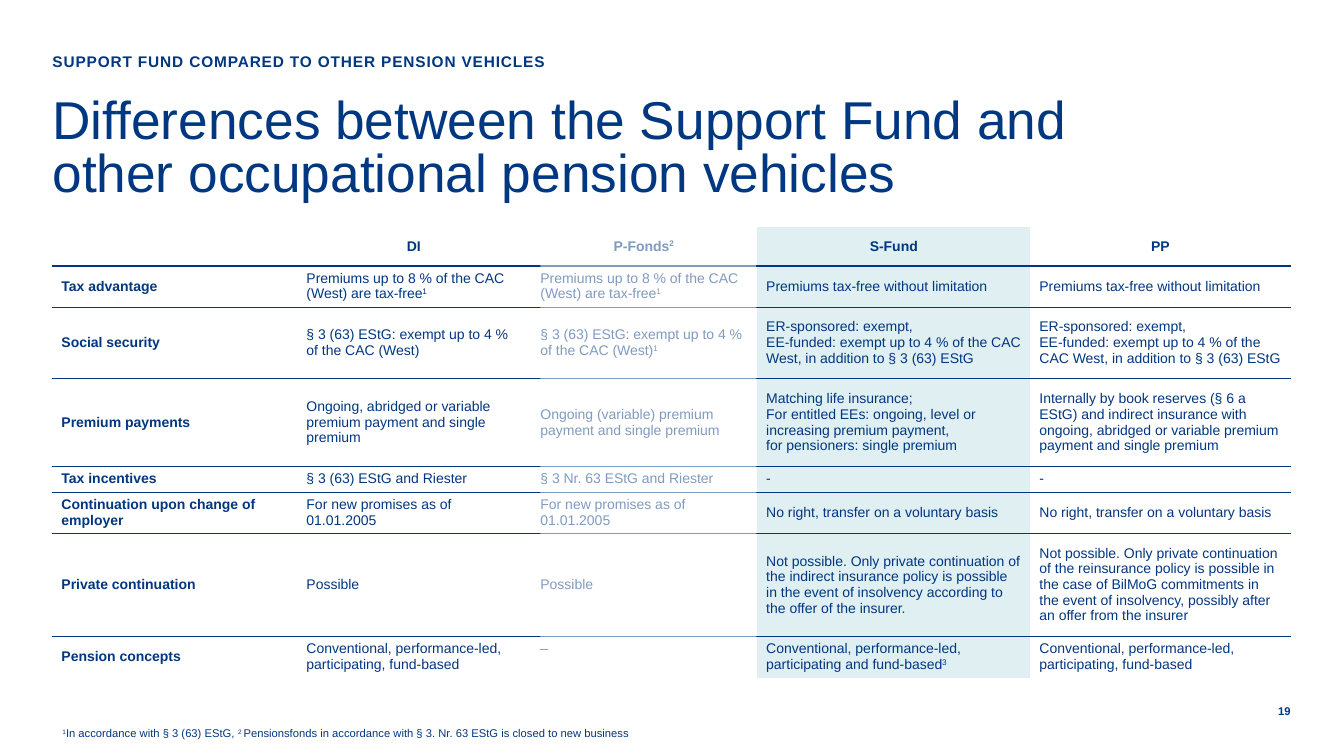
from lxml import etree
from pptx import Presentation
from pptx.dml.color import RGBColor
from pptx.enum.shapes import MSO_SHAPE
from pptx.enum.text import MSO_ANCHOR, MSO_AUTO_SIZE, PP_ALIGN
from pptx.oxml.ns import qn
from pptx.util import Inches, Pt

LEFT, CENTER, RIGHT = PP_ALIGN.LEFT, PP_ALIGN.CENTER, PP_ALIGN.RIGHT
TOP, MIDDLE, BOTTOM = MSO_ANCHOR.TOP, MSO_ANCHOR.MIDDLE, MSO_ANCHOR.BOTTOM
NAVY, PALE_BLUE, WHITE = "003781", "DFEFF2", "FFFFFF"
FONT = "Arial"
NO_STYLE = "{2D5ABB26-0587-4C30-8999-92F81FD0307C}"
TITLE_LAYOUT = 1

MARGIN = 0.52
COLUMN_WIDTHS = [2.43, 2.31, 2.25, 2.71, 2.58]
ROW_HEIGHTS = [0.25, 0.41, 0.71, 0.87, 0.25, 0.41, 1.02, 0.41]
CLOSED_COLUMN, FUND_COLUMN = 2, 3

# Text between carets is superscript; a line break starts a paragraph.
ROWS = [
    ["", "DI", "P-Fonds^2^", "S-Fund", "PP"],
    ["Tax advantage",
     "Premiums up to 8 % of the CAC (West) are tax-free^1^",
     "Premiums up to 8 % of the CAC (West) are tax-free^1^",
     "Premiums tax-free without limitation",
     "Premiums tax-free without limitation"],
    ["Social security",
     "§ 3 (63) EStG: exempt up to 4 % of the CAC (West)",
     "§ 3 (63) EStG: exempt up to 4 % of the CAC (West)^1^",
     "ER-sponsored: exempt,\nEE-funded: exempt up to 4 % of the CAC West, "
     "in addition to § 3 (63) EStG",
     "ER-sponsored: exempt,\nEE-funded: exempt up to 4 % of the CAC West, "
     "in addition to § 3 (63) EStG"],
    ["Premium payments",
     "Ongoing, abridged or variable premium payment and single premium",
     "Ongoing (variable) premium payment and single premium",
     "Matching life insurance;\nFor entitled EEs: ongoing, level or increasing "
     "premium payment,\nfor pensioners: single premium",
     "Internally by book reserves (§ 6 a EStG) and indirect insurance with "
     "ongoing, abridged or variable premium payment and single premium"],
    ["Tax incentives", "§ 3 (63) EStG and Riester", "§ 3 Nr. 63 EStG and Riester",
     "-", "-"],
    ["Continuation upon change of employer",
     "For new promises as of 01.01.2005",
     "For new promises as of 01.01.2005",
     "No right, transfer on a voluntary basis",
     "No right, transfer on a voluntary basis"],
    ["Private continuation", "Possible", "Possible",
     "Not possible. Only private continuation of the indirect insurance policy is "
     "possible in the event of insolvency according to the offer of the insurer.",
     "Not possible. Only private continuation of the reinsurance policy is possible "
     "in the case of BilMoG commitments in the event of insolvency, possibly after "
     "an offer from the insurer"],
    ["Pension concepts",
     "Conventional, performance-led, participating, fund-based",
     "–",
     "Conventional, performance-led, participating and fund-based^3^",
     "Conventional, performance-led, participating, fund-based"],
]


def color(value):
    return RGBColor.from_string(value)


def write(frame, text, size=10, bold=False, align=LEFT, line_spacing=None,
          letter_spacing=None):
    for index, line in enumerate(text.split("\n")):
        paragraph = frame.add_paragraph() if index else frame.paragraphs[0]
        paragraph.alignment = align
        paragraph.space_before = Pt(0)
        if line_spacing:
            paragraph.line_spacing = Pt(line_spacing)
        for part, words in enumerate(line.split("^")):
            if not words:
                continue
            run = paragraph.add_run()
            run.text = words
            run.font.name, run.font.size, run.font.bold = FONT, Pt(size), bold
            run.font.color.rgb = color(NAVY)
            properties = run.font._element
            if part % 2:
                properties.set("baseline", "30000")
            if letter_spacing:
                properties.set("spc", str(round(letter_spacing * 100)))


def prepare(shape, box, anchor=TOP, inset=(0, 0)):
    """Place a text shape and return its text frame."""
    shape.left, shape.top, shape.width, shape.height = map(Inches, box)
    frame = shape.text_frame
    frame.word_wrap = True
    frame.auto_size = MSO_AUTO_SIZE.NONE
    frame.vertical_anchor = anchor
    frame.margin_left = frame.margin_right = Inches(inset[0])
    frame.margin_top = frame.margin_bottom = Inches(inset[1])
    return frame


def add_text(slide, box, text, anchor=TOP, inset=(0, 0), **text_format):
    shape = slide.shapes.add_textbox(*map(Inches, box))
    write(prepare(shape, box, anchor, inset), text, **text_format)


def add_heading(slide, left, top, width):
    title, section = slide.shapes.title, slide.placeholders[1]
    write(prepare(title, (left, top + 0.44, width, 1.02)),
          "Differences between the Support Fund and other occupational pension vehicles",
          size=38, line_spacing=38)
    frame = prepare(section, (left, top, width, 0.28))
    properties = frame.paragraphs[0]._p.get_or_add_pPr()
    properties.set("marL", "0")
    properties.set("indent", "0")
    etree.SubElement(properties, qn("a:buNone"))
    write(frame, "SUPPORT FUND COMPARED TO OTHER PENSION VEHICLES",
          size=11, bold=True, letter_spacing=0.6)


def rule_below(cell, width):
    line = etree.Element(qn("a:lnB"), w=str(Pt(width)))
    fill = etree.SubElement(line, qn("a:solidFill"))
    etree.SubElement(fill, qn("a:srgbClr"), val=NAVY)
    cell._tc.get_or_add_tcPr().insert(0, line)


def fill_cell(cell, row, column):
    header, closed = row == 0, column == CLOSED_COLUMN
    last = row == len(ROWS) - 1
    cell.margin_left = cell.margin_right = Inches(0.1 if closed else 0.09)
    cell.margin_top = cell.margin_bottom = Inches(0.04 if header else 0.05)
    cell.vertical_anchor = TOP if closed and last else MIDDLE
    if column == FUND_COLUMN:
        cell.fill.solid()
        cell.fill.fore_color.rgb = color(PALE_BLUE)
    else:
        cell.fill.background()
    if not last:
        rule_below(cell, 1.5 if header else 0.75)
    write(cell.text_frame, ROWS[row][column], bold=header or column == 0,
          align=CENTER if header else LEFT)


def add_comparison(slide, left, top):
    frame = slide.shapes.add_table(
        len(ROWS), len(COLUMN_WIDTHS), Inches(left), Inches(top),
        Inches(sum(COLUMN_WIDTHS)), Inches(sum(ROW_HEIGHTS)))
    table = frame.table
    table.first_row = table.horz_banding = False
    table._tbl.tblPr.find(qn("a:tableStyleId")).text = NO_STYLE
    for column, width in zip(table.columns, COLUMN_WIDTHS):
        column.width = Inches(width)
    for row, height in zip(table.rows, ROW_HEIGHTS):
        row.height = Inches(height)
    for row in range(len(ROWS)):
        for column in range(len(COLUMN_WIDTHS)):
            fill_cell(table.cell(row, column), row, column)
    add_veil(slide, left + sum(COLUMN_WIDTHS[:CLOSED_COLUMN]) + 0.1, top + 0.04,
             COLUMN_WIDTHS[CLOSED_COLUMN] - 0.11, 4.45)


def add_veil(slide, *box):
    """Fade a column with a half-transparent white rectangle."""
    veil = slide.shapes.add_shape(MSO_SHAPE.RECTANGLE, *map(Inches, box))
    veil.shadow.inherit = False
    veil.line.fill.background()
    veil.fill.solid()
    veil.fill.fore_color.rgb = color(WHITE)
    shade = veil._element.spPr.find(qn("a:solidFill")).find(qn("a:srgbClr"))
    etree.SubElement(shade, qn("a:alpha"), val="50000")


def add_footer(slide, left, top, right):
    add_text(slide, (right - 0.29, top, 0.29, 0.16), "19", anchor=MIDDLE,
             size=8, bold=True, align=RIGHT, line_spacing=10)
    add_text(slide, (left, top, 7.85, 0.42),
             "^1^In accordance with § 3 (63) EStG, ^2 ^Pensionsfonds in accordance "
             "with § 3. Nr. 63 EStG is closed to new business",
             anchor=BOTTOM, inset=(0.1, 0.05), size=8)


def main():
    presentation = Presentation()
    presentation.slide_width, presentation.slide_height = Inches(13.33), Inches(7.5)
    slide = presentation.slides.add_slide(presentation.slide_layouts[TITLE_LAYOUT])
    add_heading(slide, MARGIN, 0.52, 10.2)
    add_comparison(slide, MARGIN, 2.25)
    add_footer(slide, MARGIN, 6.97, MARGIN + sum(COLUMN_WIDTHS))
    presentation.save("out.pptx")


if __name__ == "__main__":
    main()
